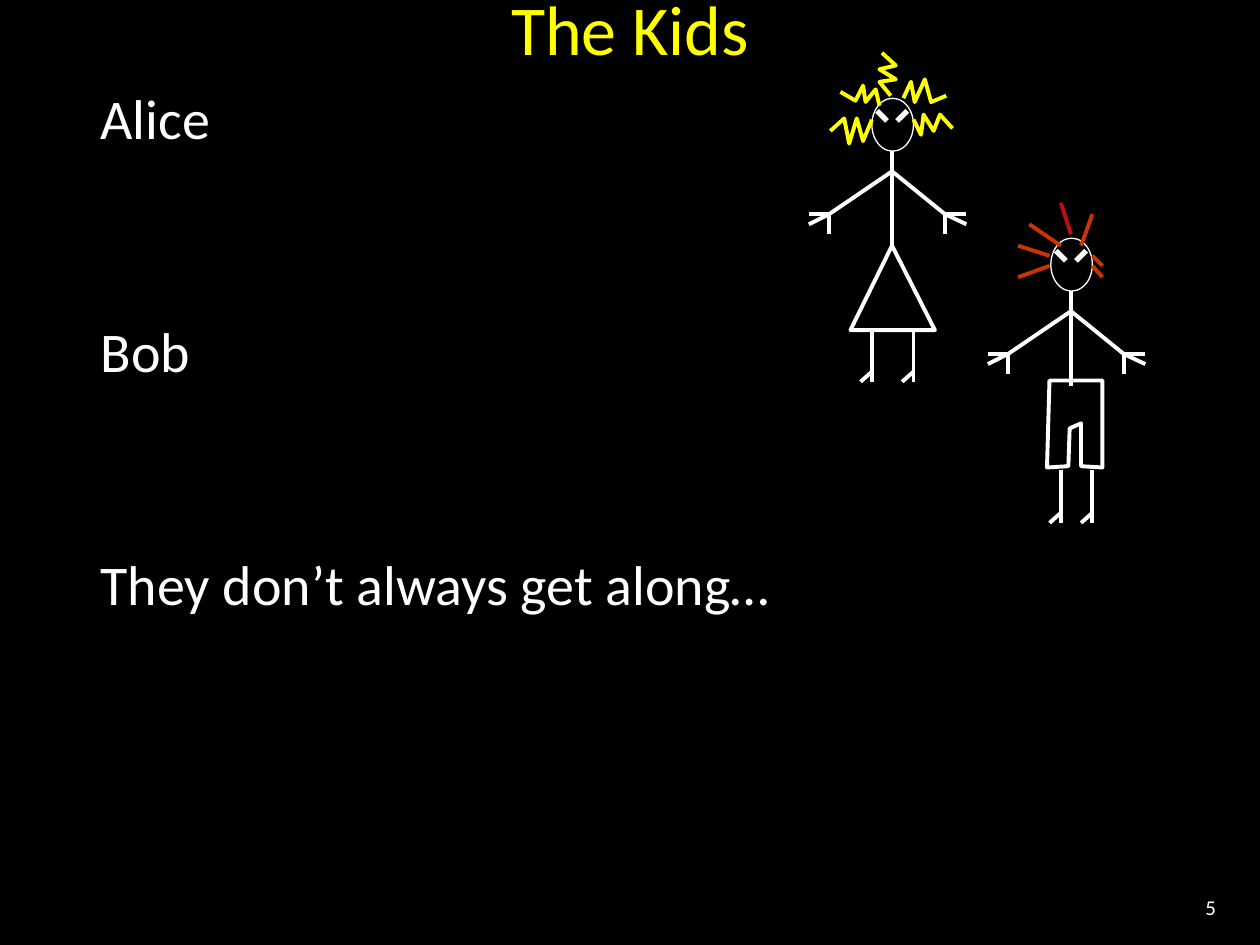
"""Build a slide showing two stick-figure kids, Alice and Bob."""
from lxml import etree
from pptx import Presentation
from pptx.dml.color import RGBColor
from pptx.enum import shapes, text
from pptx.oxml import ns
from pptx.util import Inches, Pt

WHITE, YELLOW, ORANGE, RED = "FFFFFF", "FFFF00", "CC3300", "BC1010"


def set_color(fmt, color):
    fmt.rgb = RGBColor.from_string(color)


def outline(sp, color, width):
    set_color(sp.line.color, color)
    sp.line.width = Pt(width)
    etree.SubElement(sp._element.spPr, ns.qn("a:effectLst"))


prs = Presentation()
prs.slide_width, prs.slide_height = Inches(10), Inches(7.5)
s = prs.slides.add_slide(prs.slide_layouts[5])
s.background.fill.solid()
set_color(s.background.fill.fore_color, "000000")

title = s.shapes.title
title.left, title.top, title.width, title.height = [Inches(v) for v in (0, 0, 10, 0.44)]
body = s.shapes.add_textbox(Inches(0.7), Inches(0.61), Inches(5.82), Inches(4.95))
number = s.shapes.add_textbox(Inches(8.92), Inches(7), Inches(0.83), Inches(0.4))

top, middle = text.MSO_ANCHOR.TOP, text.MSO_ANCHOR.MIDDLE
left, center, right = text.PP_ALIGN.LEFT, text.PP_ALIGN.CENTER, text.PP_ALIGN.RIGHT
for sp, lines, size, color, anchor, align in (
    (title, ["The Kids"], 40, YELLOW, middle, center),
    (body, ["Alice", "Bob", "They don’t always get along…"], 32, WHITE, top, left),
    (number, ["5"], 12, WHITE, middle, right),
):
    tf = sp.text_frame
    tf.word_wrap = True
    tf.auto_size = text.MSO_AUTO_SIZE.NONE
    tf.vertical_anchor = anchor
    for i, line in enumerate(lines):
        p = tf.add_paragraph() if i else tf.paragraphs[0]
        p.alignment = align
        p.space_before = Pt(95 if i else 0)
        r = p.add_run()
        r.text = line
        r.font.name, r.font.size = "Calibri", Pt(size)
        set_color(r.font.color, color)

alice_hair = [
    (YELLOW, [(7.25, 0.95), (7.31, 1.07), (7.33, 0.91), (7.41, 1.04), (7.46, 0.91), (7.56, 1.02)]),
    (YELLOW, [(7.17, 0.78), (7.23, 0.65), (7.26, 0.81), (7.34, 0.63), (7.39, 0.81), (7.51, 0.76)]),
    (YELLOW, [(6.59, 1.04), (6.7, 0.94), (6.74, 1.14), (6.8, 0.94), (6.85, 1.12), (6.92, 0.95)]),
    (YELLOW, [(6.67, 0.73), (6.79, 0.8), (6.85, 0.68), (6.87, 0.81), (6.95, 0.71), (6.98, 0.84)]),
    (YELLOW, [(7.07, 0.76), (6.98, 0.65), (7.11, 0.63), (6.98, 0.55), (7.11, 0.52), (7, 0.42)]),
]
bob_hair = [
    (ORANGE, [(8.33, 2.11), (8.08, 2.2)]),
    (ORANGE, [(8.33, 2.03), (8.08, 1.95)]),
    (ORANGE, [(8.42, 1.95), (8.17, 1.78)]),
    (RED, [(8.5, 1.86), (8.42, 1.61)]),
    (ORANGE, [(8.67, 2.03), (8.75, 2.11)]),
    (ORANGE, [(8.58, 1.95), (8.67, 1.7)]),
    (ORANGE, [(8.67, 2.11), (8.75, 2.2)]),
]
skirt = [(7.08, 1.95), (7.42, 2.62), (6.75, 2.62), (7.08, 1.95)]
trousers = [(8.33, 3.02), (8.75, 3.02), (8.75, 3.71), (8.58, 3.7), (8.58, 3.36),
            (8.49, 3.4), (8.48, 3.7), (8.31, 3.71), (8.33, 3.02)]

for x, y, legs, hip, clothes, hair in (
    (7.08, 0.78, (6.92, 7.25), 2.61, skirt, alice_hair),
    (8.5, 1.89, (8.42, 8.67), 3.73, trousers, bob_hair),
):
    kid = s.shapes.add_group_shape()
    head = kid.shapes.add_shape(shapes.MSO_SHAPE.OVAL, Inches(x - 0.16), Inches(y),
                                Inches(0.33), Inches(0.42))
    head.fill.background()
    outline(head, WHITE, 0.75)

    strokes = [(WHITE, 2.25, [(x, y + 0.42), (x, y + 1.17)])]
    for wrist, tip in ((x - 0.5, x - 0.66), (x + 0.42, x + 0.59)):
        hand = (wrist, y + 0.92)
        for end in ((x, y + 0.58), (tip, y + 0.92), (tip, y + 1), (wrist, y + 1.08)):
            strokes.append((WHITE, 2.25, [hand, end]))
    for leg in legs:
        ankle = (leg, hip + 0.34)
        for end in ((leg, hip), (leg - 0.09, hip + 0.42), (leg, hip + 0.42)):
            strokes.append((WHITE, 2.25, [ankle, end]))
    strokes.append((WHITE, 2.25, clothes))
    strokes += [(color, 2.25, points) for color, points in hair]
    for side in (-1, 1):
        strokes.append((WHITE, 3, [(x + side * 0.12, y + 0.1), (x + side * 0.04, y + 0.18)]))

    for color, width, points in strokes:
        pts = [(Inches(px), Inches(py)) for px, py in points]
        if len(pts) == 2:
            sp = kid.shapes.add_connector(shapes.MSO_CONNECTOR.STRAIGHT, *pts[0], *pts[1])
        else:
            outline_path = kid.shapes.build_freeform(*pts[0])
            outline_path.add_line_segments(pts[1:], close=pts[0] == pts[-1])
            sp = outline_path.convert_to_shape()
            sp.fill.background()
        outline(sp, color, width)

prs.save("out.pptx")
